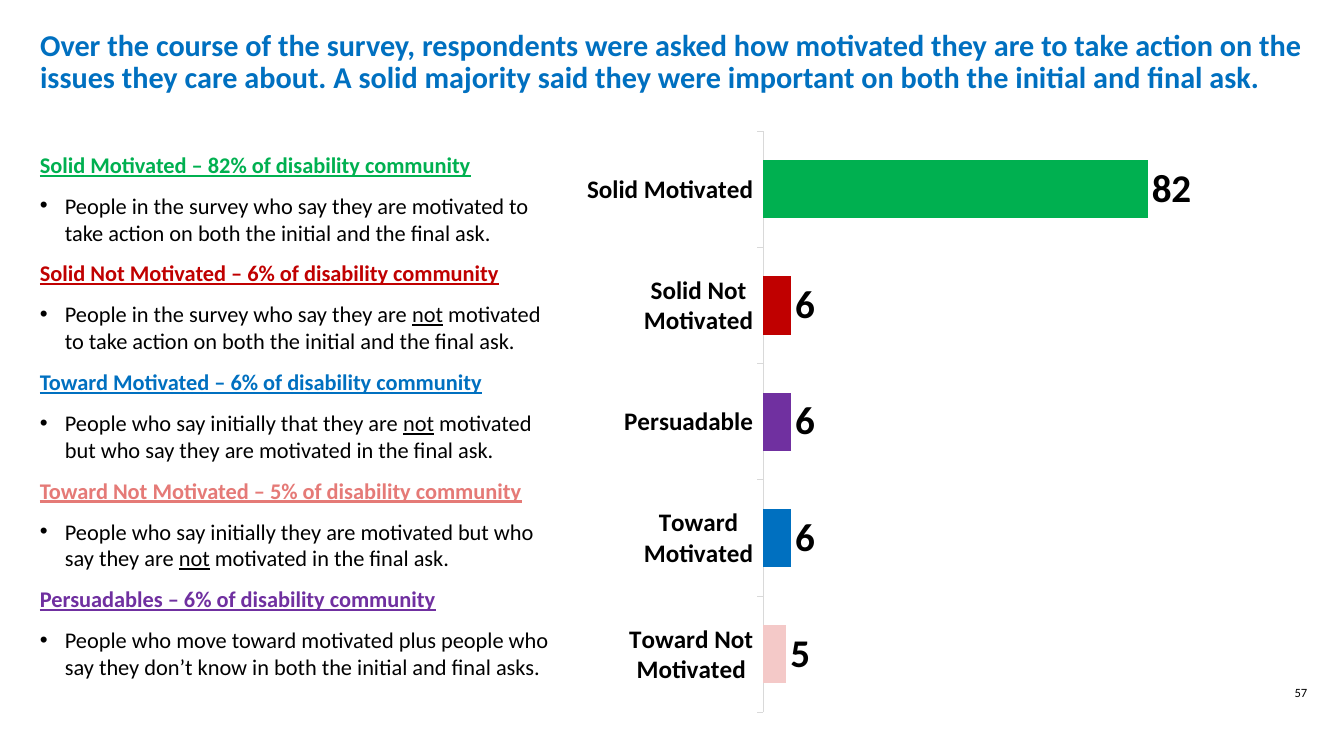
from lxml import etree
from pptx import Presentation
from pptx.chart.data import CategoryChartData as ChartData
from pptx.dml.color import RGBColor as Rgb
from pptx.enum.chart import XL_CHART_TYPE as Kind, XL_LABEL_POSITION as Spot, XL_TICK_MARK as Tick
from pptx.enum.text import MSO_ANCHOR as Anchor, MSO_AUTO_SIZE as Fit, PP_ALIGN as Align
from pptx.oxml import parse_xml
from pptx.oxml.ns import nsdecls, qn
from pptx.util import Emu, Pt

SCALE = 914400 / 100.8
FACE = "Calibri"
HUES = {
    "black": "000000", "axis": "D9D9D9", "green": "00B050", "red": "C00000",
    "blue": "0070C0", "rose": "E57A77", "pink": "F4C9C8", "purple": "7030A0",
}
TITLE = ("Over the course of the survey, respondents were asked how motivated they are "
         "to take action on the issues they care about. A solid majority said they were "
         "important on both the initial and final ask.")
GROUPS = [
    ("Solid Motivated – 82% of disability community", "green",
     "People in the survey who say they are motivated to take action on both the initial "
     "and the final ask."),
    ("Solid Not Motivated – 6% of disability community", "red",
     "People in the survey who say they are not motivated to take action on both the "
     "initial and the final ask."),
    ("Toward Motivated – 6% of disability community", "blue",
     "People who say initially that they are not motivated but who say they are motivated "
     "in the final ask."),
    ("Toward Not Motivated – 5% of disability community", "rose",
     "People who say initially they are motivated but who say they are not motivated in "
     "the final ask."),
    ("Persuadables – 6% of disability community", "purple",
     "People who move toward motivated plus people who say they don’t know in both the "
     "initial and final asks."),
]
BARS = [
    ("Toward Not Motivated", 5, "pink"),
    ("Toward Motivated", 6, "blue"),
    ("Persuadable", 6, "purple"),
    ("Solid Not Motivated", 6, "red"),
    ("Solid Motivated", 82, "green"),
]
PLOT = {"x": 0.23, "y": 0.04, "w": 0.56, "h": 0.96}


def px(count):
    return Emu(round(count * SCALE))


def style(font, size, hue="black", bold=False):
    font.name, font.size, font.bold = FACE, Pt(size), bold
    font.color.rgb = Rgb.from_string(HUES[hue])


def add_text(slide, box):
    frame = slide.shapes.add_textbox(*map(px, box)).text_frame
    frame.word_wrap = True
    return frame


def set_title(slide, box):
    title = slide.shapes.title
    title.left, title.top, title.width, title.height = map(px, box)
    frame = title.text_frame
    frame.text = TITLE
    frame.word_wrap = True
    frame.auto_size = Fit.NONE
    frame.vertical_anchor = Anchor.TOP
    para = frame.paragraphs[0]
    para.alignment = Align.LEFT
    para.line_spacing = 0.9
    style(para.font, 21.6, "blue", True)


def add_bullet(para, indent):
    props = para._p.get_or_add_pPr()
    props.set("marL", str(px(indent)))
    props.set("indent", str(-px(indent)))
    etree.SubElement(props, qn("a:buFont")).set("typeface", "Arial")
    etree.SubElement(props, qn("a:buChar")).set("char", "•")


def add_groups(slide, box):
    """List each group's heading and meaning, with every "not" underlined."""
    frame = add_text(slide, box)
    for rank, (head, hue, body) in enumerate(GROUPS):
        para = frame.add_paragraph() if rank else frame.paragraphs[0]
        para.text = head
        para.space_before = Pt(10 if rank else 0)
        style(para.font, 16, hue, True)
        para.font.underline = True

        para = frame.add_paragraph()
        add_bullet(para, 25)
        para.space_before = Pt(10)
        style(para.font, 16)
        before, word, after = body.partition(" not ")
        if word:
            para.add_run().text = before + " "
            run = para.add_run()
            run.text = word.strip()
            run.font.underline = True
            para.add_run().text = " " + after
        else:
            para.add_run().text = body


def place_plot(chart):
    """Fix the inner plot area as shares of the chart's box."""
    area = chart.element.find(".//" + qn("c:plotArea"))
    for old in area.findall(qn("c:layout")):
        area.remove(old)
    sizes = "".join(f'<c:{key} val="{share}"/>' for key, share in PLOT.items())
    area.insert(0, parse_xml(
        f'<c:layout {nsdecls("c")}><c:manualLayout><c:layoutTarget val="inner"/>'
        f'<c:xMode val="edge"/><c:yMode val="edge"/>{sizes}</c:manualLayout></c:layout>'))


def add_bars(slide, box):
    names, values, hues = zip(*BARS)
    data = ChartData()
    data.categories = names
    data.add_series("Series 1", values)
    chart = slide.shapes.add_chart(Kind.BAR_CLUSTERED, *map(px, box), data).chart
    chart.has_legend = chart.has_title = False
    style(chart.font, 10)
    place_plot(chart)

    scale = chart.value_axis
    scale.visible = scale.has_major_gridlines = False
    scale.minimum_scale, scale.maximum_scale = 0, 90
    axis = chart.category_axis
    axis.major_tick_mark = Tick.OUTSIDE
    axis.format.line.width = Pt(0.75)
    axis.format.line.color.rgb = Rgb.from_string(HUES["axis"])
    style(axis.tick_labels.font, 18, bold=True)

    plot = chart.plots[0]
    plot.gap_width = 100
    plot.vary_by_categories = False
    series = plot.series[0]
    for rank, hue in enumerate(hues):
        fill = series.points[rank].format.fill
        fill.solid()
        fill.fore_color.rgb = Rgb.from_string(HUES[hue])
    labels = series.data_labels
    labels.show_value = True
    labels.position = Spot.OUTSIDE_END
    style(labels.font, 28, bold=True)


def add_number(slide, box):
    para = add_text(slide, box).paragraphs[0]
    para.text = "57"
    para.alignment = Align.CENTER
    style(para.font, 9)


def main():
    deck = Presentation()
    deck.slide_width, deck.slide_height = px(1344), px(756)
    slide = deck.slides.add_slide(deck.slide_layouts[5])
    set_title(slide, (30, 25, 1283, 82))
    add_number(slide, (1263, 680, 76, 33))
    add_bars(slide, (587, 107, 757, 606))
    add_groups(slide, (30, 146, 544, 606))
    deck.save("out.pptx")


if __name__ == "__main__":
    main()
